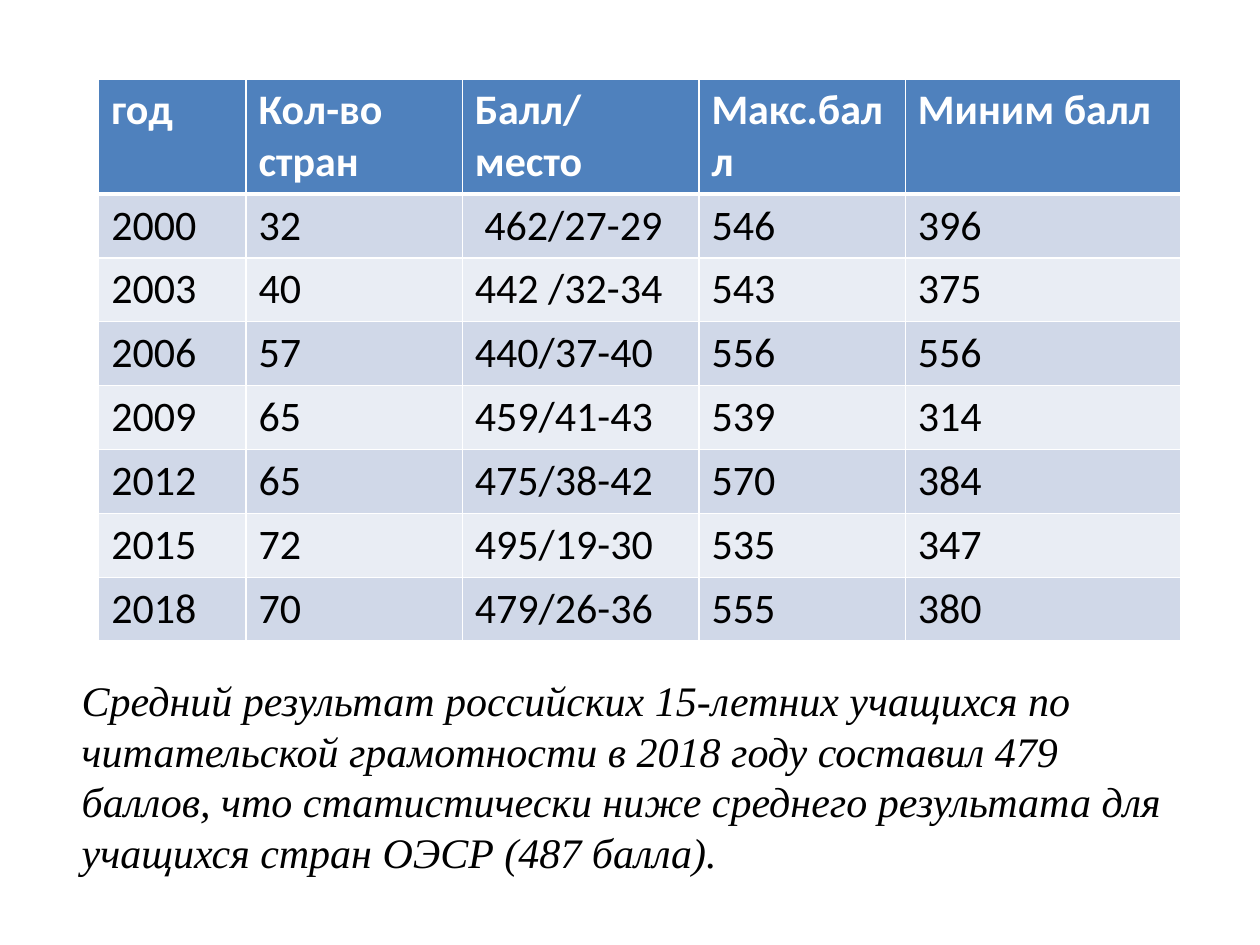
from lxml import etree
from pptx import Presentation
from pptx.dml.color import RGBColor
from pptx.enum.text import MSO_AUTO_SIZE
from pptx.oxml.ns import qn
from pptx.util import Pt

FIT_SHAPE = MSO_AUTO_SIZE.SHAPE_TO_FIT_TEXT
BLANK_LAYOUT = 6

WHITE, BLACK = "FFFFFF", "000000"
HEADER_FILL = "4F81BD"
BAND_FILLS = ("E9EDF4", "D0D8E8")

COLUMN_WIDTHS = (84.2, 123.6, 135.2, 118, 157.5)
ROW_HEIGHT = 29.2
RESULTS = (
    ("год", "Кол-во стран", "Балл/место", "Макс.балл", "Миним балл"),
    ("2000", "32", " 462/27-29", "546", "396"),
    ("2003", "40", "442 /32-34", "543", "375"),
    ("2006", "57", "440/37-40", "556", "556"),
    ("2009", "65", "459/41-43", "539", "314"),
    ("2012", "65", "475/38-42", "570", "384"),
    ("2015", "72", "495/19-30", "535", "347"),
    ("2018", "70", "479/26-36", "555", "380"),
)
SUMMARY = (
    "Средний результат российских 15-летних учащихся по читательской "
    "грамотности в 2018 году составил 479 баллов, что статистически ниже "
    "среднего результата для учащихся стран ОЭСР (487 балла)."
)


def color(value):
    return RGBColor.from_string(value)


class SlideBuilder:
    """Holds the text style and the current slide."""

    table_font = "Calibri"
    summary_font = "Times New Roman"
    text_size = 24

    def __init__(self, slide):
        self.slide = slide

    def add_text(self, frame, text, ink, **formats):
        span = frame.paragraphs[0].add_run()
        span.text = text
        span.font.color.rgb = color(ink)
        for name, value in {"size": Pt(self.text_size), **formats}.items():
            setattr(span.font, name, value)

    def border(self, cell, widths):
        properties = cell._tc.get_or_add_tcPr()
        # Border lines come before the fill in the cell properties
        for index, (side, width) in enumerate(widths.items()):
            line = etree.Element(qn(f"a:ln{side}"), w=str(Pt(width)))
            fill = etree.SubElement(line, qn("a:solidFill"))
            etree.SubElement(fill, qn("a:srgbClr"), val=WHITE)
            properties.insert(index, line)

    def table(self, left, top, rows, column_widths, row_height):
        table = self.slide.shapes.add_table(
            len(rows), len(column_widths), Pt(left), Pt(top),
            Pt(sum(column_widths)), Pt(row_height * len(rows))).table
        for column, width in zip(table.columns, column_widths):
            column.width = Pt(width)
        for index, texts in enumerate(rows):
            is_header = index == 0
            table.rows[index].height = Pt(row_height)
            fill = HEADER_FILL if is_header else BAND_FILLS[index % 2]
            widths = {"L": 1, "R": 1, "T": 3 if index == 1 else 1,
                      "B": 3 if is_header else 1}
            for cell, text in zip(table.rows[index].cells, texts):
                cell.fill.solid()
                cell.fill.fore_color.rgb = color(fill)
                self.border(cell, widths)
                self.add_text(cell.text_frame, text,
                              WHITE if is_header else BLACK,
                              name=self.table_font, bold=is_header)

    def summary(self, left, top, width, height, text, top_margin):
        box = self.slide.shapes.add_textbox(
            Pt(left), Pt(top), Pt(width), Pt(height))
        formats = {"word_wrap": True, "auto_size": FIT_SHAPE,
                   "margin_top": Pt(top_margin)}
        for name, value in formats.items():
            setattr(box.text_frame, name, value)
        self.add_text(box.text_frame, text, BLACK,
                      name=self.summary_font, italic=True)


def main():
    deck = Presentation()
    deck.slide_width, deck.slide_height = Pt(720), Pt(540)
    page = SlideBuilder(deck.slides.add_slide(deck.slide_layouts[BLANK_LAYOUT]))

    # Results by year
    page.table(56.4, 45, RESULTS, COLUMN_WIDTHS, ROW_HEIGHT)

    # Summary below the table
    page.summary(39.6, 360, 636, 145.4, SUMMARY, top_margin=25.6)

    deck.save("out.pptx")


if __name__ == "__main__":
    main()
